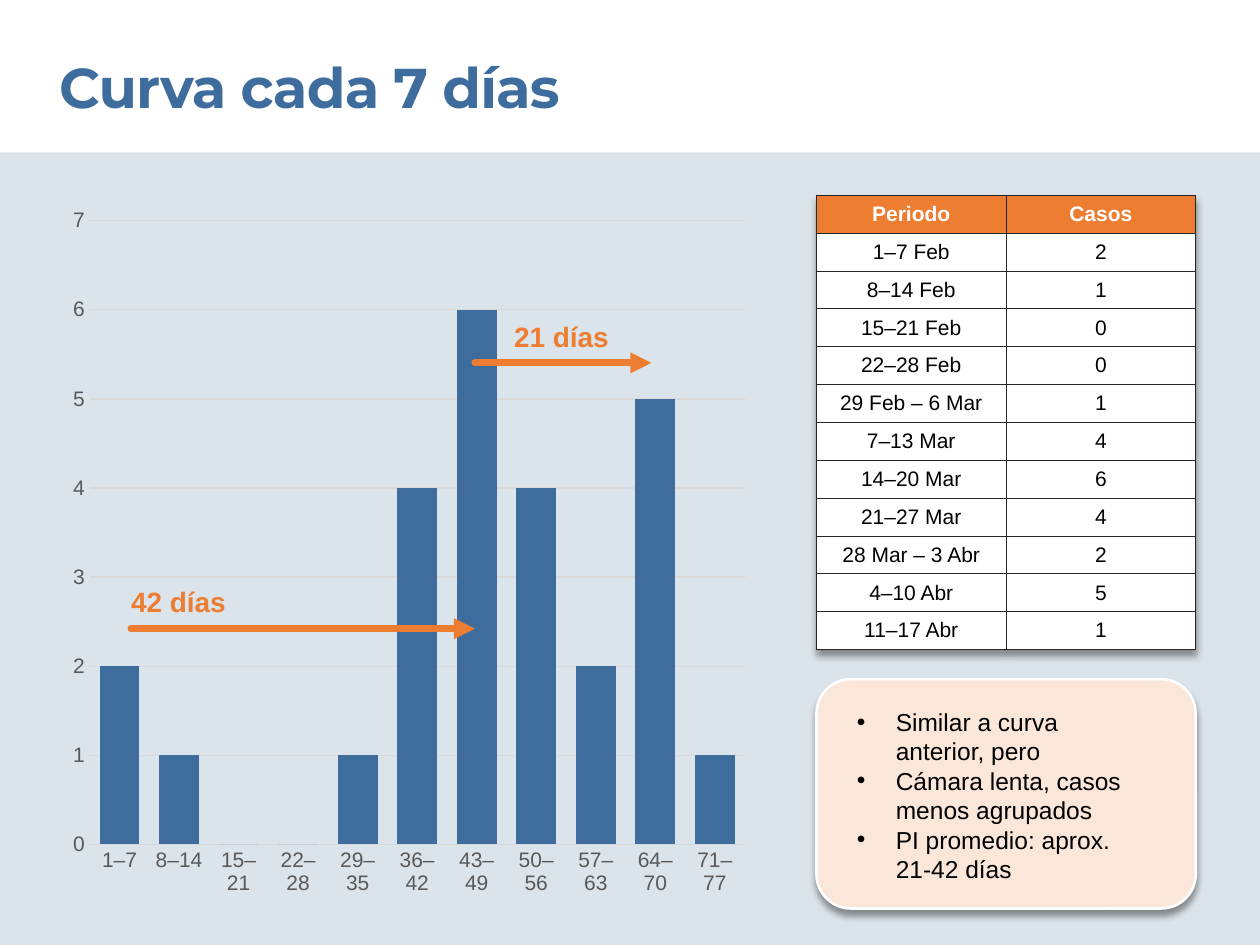
from collections import namedtuple

from lxml import etree
from pptx import Presentation
from pptx import util as u
from pptx.chart import data as chart_data
from pptx.dml import color
from pptx.enum import chart as chart_enum
from pptx.enum import shapes, text
from pptx.oxml import ns, parse_xml

Box = namedtuple("Box", "left top width height")

GRID = u.Inches(0.1)
COLUMNS, ROWS = 100, 75
BLUE, ORANGE, PEACH, PALE = "3D6C9D", "ED7D31", "FBE7DA", "DBE4EA"
WHITE, BLACK, GREY, RULE, BORDER = "FFFFFF", "000000", "595959", "D9D9D9", "262626"

PERIODS = [
    ("1–7 Feb", "1–7", 2), ("8–14 Feb", "8–14", 1), ("15–21 Feb", "15–21", 0),
    ("22–28 Feb", "22–28", 0), ("29 Feb – 6 Mar", "29–35", 1), ("7–13 Mar", "36–42", 4),
    ("14–20 Mar", "43–49", 6), ("21–27 Mar", "50–56", 4), ("28 Mar – 3 Abr", "57–63", 2),
    ("4–10 Abr", "64–70", 5), ("11–17 Abr", "71–77", 1),
]
REMARKS = [
    "Similar a curva anterior, pero",
    "Cámara lenta, casos menos agrupados",
    "PI promedio: aprox. 21-42 días",
]


def rgb(value):
    return color.RGBColor.from_string(value)


def grid(*cells):
    return [round(cell * GRID) for cell in cells]


def inset(box, left, top, width, height):
    return Box(box.left + left, box.top + top, width, height)


def style(font, size, tint, bold=False, face="Arial"):
    font.name, font.size, font.bold = face, u.Pt(size), bold
    font.color.rgb = rgb(tint)


def paint(part, tint):
    part.fill.solid()
    part.fill.fore_color.rgb = rgb(tint)


def add_shadow(properties):
    for old in properties.findall(ns.qn("a:effectLst")):
        properties.remove(old)
    effects = parse_xml(
        f'<a:effectLst {ns.nsdecls("a")}>'
        '<a:outerShdw blurRad="50800" dist="38100" dir="5400000" algn="t" rotWithShape="0">'
        '<a:srgbClr val="000000"><a:alpha val="40000"/></a:srgbClr></a:outerShdw></a:effectLst>')
    style_id = properties.find(ns.qn("a:tableStyleId"))
    if style_id is None:
        properties.append(effects)
    else:
        style_id.addprevious(effects)


def add_panel(slide, box, kind, tint):
    panel = slide.shapes.add_shape(kind, *grid(*box))
    panel.shadow.inherit = False
    paint(panel, tint)
    panel.line.fill.background()
    return panel


def add_words(slide, box, lines, size, tint, bold=False, face="Arial"):
    frame = slide.shapes.add_textbox(*grid(*box)).text_frame
    frame.margin_left = frame.margin_top = frame.margin_right = frame.margin_bottom = 0
    frame.word_wrap = True
    frame.auto_size = text.MSO_AUTO_SIZE.SHAPE_TO_FIT_TEXT
    frame.text = "\n".join(lines)
    for paragraph in frame.paragraphs:
        style(paragraph.runs[0].font, size, tint, bold, face)
    return frame


def add_title(slide, box):
    title = add_words(slide, box, ["Curva cada 7 días"], 32, BLUE, True, "Montserrat")
    title.paragraphs[0].runs[0].font._element.set("spc", "-50")


def add_remarks(slide, box):
    card = add_panel(slide, box, shapes.MSO_SHAPE.ROUNDED_RECTANGLE, PEACH)
    card.adjustments[0] = 0.15
    card.line.color.rgb = rgb(WHITE)
    card.line.width = u.Pt(1.5)
    add_shadow(card._element.spPr)
    remarks = add_words(slide, inset(box, 3.2, 2.2, 23, 14.1), REMARKS, 14, BLACK)
    for paragraph in remarks.paragraphs:
        properties = paragraph._p.get_or_add_pPr()
        properties.set("marL", str(u.Inches(0.31)))
        properties.set("indent", str(-u.Inches(0.31)))
        tint = etree.SubElement(properties, ns.qn("a:buClr"))
        etree.SubElement(tint, ns.qn("a:srgbClr"), val=BLACK)
        etree.SubElement(properties, ns.qn("a:buFont"), typeface="Arial")
        etree.SubElement(properties, ns.qn("a:buChar"), char="•")


def add_borders(cell):
    properties = cell._tc.get_or_add_tcPr()
    for side in ("lnL", "lnR", "lnT", "lnB"):
        border = etree.SubElement(properties, ns.qn(f"a:{side}"), w=str(u.Pt(0.5)))
        fill = etree.SubElement(border, ns.qn("a:solidFill"))
        etree.SubElement(fill, ns.qn("a:srgbClr"), val=BORDER)


def add_case_table(slide, box):
    rows = [("Periodo", "Casos")] + [(period, str(cases)) for period, _, cases in PERIODS]
    table = slide.shapes.add_table(len(rows), 2, *grid(*box)).table
    table.horz_banding = False
    add_shadow(table._tbl.tblPr)
    for r, row in enumerate(rows):
        header = r == 0
        for c, words in enumerate(row):
            cell = table.cell(r, c)
            add_borders(cell)
            paint(cell, ORANGE if header else WHITE)
            cell.margin_left = cell.margin_right = u.Inches(0.08)
            cell.margin_top = cell.margin_bottom = u.Inches(0.05)
            cell.vertical_anchor = text.MSO_ANCHOR.MIDDLE
            cell.text_frame.text = words
            paragraph = cell.text_frame.paragraphs[0]
            paragraph.alignment = text.PP_ALIGN.CENTER
            style(paragraph.runs[0].font, 12, WHITE if header else BLACK, header)


def add_curve(slide, box):
    data = chart_data.CategoryChartData()
    data.categories = [days for _, days, _ in PERIODS]
    data.add_series("Series 1", [cases for _, _, cases in PERIODS])
    curve = slide.shapes.add_chart(
        chart_enum.XL_CHART_TYPE.COLUMN_CLUSTERED, *grid(*box), data).chart
    curve.has_legend = curve.has_title = False
    style(curve.font, 10, BLACK)
    plot = curve.plots[0]
    plot.gap_width = 50
    plot.vary_by_categories = False
    paint(plot.series[0].format, BLUE)
    days, cases = curve.category_axis, curve.value_axis
    for axis in (days, cases):
        axis.major_tick_mark = axis.minor_tick_mark = chart_enum.XL_TICK_MARK.NONE
        style(axis.tick_labels.font, 12, GREY)
    cases.minimum_scale, cases.maximum_scale, cases.major_unit = 0, 7, 1
    cases.format.line.fill.background()
    for line in (days.format.line, cases.major_gridlines.format.line):
        line.color.rgb = rgb(RULE)
        line.width = u.Pt(0.75)


def add_interval(slide, box, words, label_offset):
    right = box.left + box.width
    base = box.top + box.height
    arrow = slide.shapes.add_connector(
        shapes.MSO_CONNECTOR.STRAIGHT, *grid(box.left, base, right, base))
    arrow.line.color.rgb = rgb(ORANGE)
    arrow.line.width = u.Pt(4)
    line = arrow.line._get_or_add_ln()
    line.set("cap", "rnd")
    etree.SubElement(line, ns.qn("a:tailEnd"), type="triangle")
    etree.SubElement(arrow._element.spPr, ns.qn("a:effectLst"))
    add_words(slide, inset(box, label_offset, 0, 15.8, 2.7), [words], 16, ORANGE, True)


def add_curve_region(slide, box):
    add_curve(slide, box)
    add_interval(slide, inset(box, 5.7, 30.9, 27.3, 3.5), "42 días", 0)
    add_interval(slide, inset(box, 33, 9.9, 14, 3.4), "21 días", 3.1)


def main():
    deck = Presentation()
    deck.slide_width, deck.slide_height = grid(COLUMNS, ROWS)
    slide = deck.slides.add_slide(deck.slide_layouts[6])
    add_panel(slide, Box(0, 12.1, COLUMNS, ROWS - 12.1), shapes.MSO_SHAPE.RECTANGLE, PALE)
    add_title(slide, Box(4.7, 4.2, 85.5, 5.4))
    add_remarks(slide, Box(64.8, 53.9, 30.1, 18.2))
    add_case_table(slide, Box(64.8, 15.5, 30.1, 36))
    add_curve_region(slide, Box(4.7, 15.5, 55.5, 56.6))
    deck.save("out.pptx")


if __name__ == "__main__":
    main()
